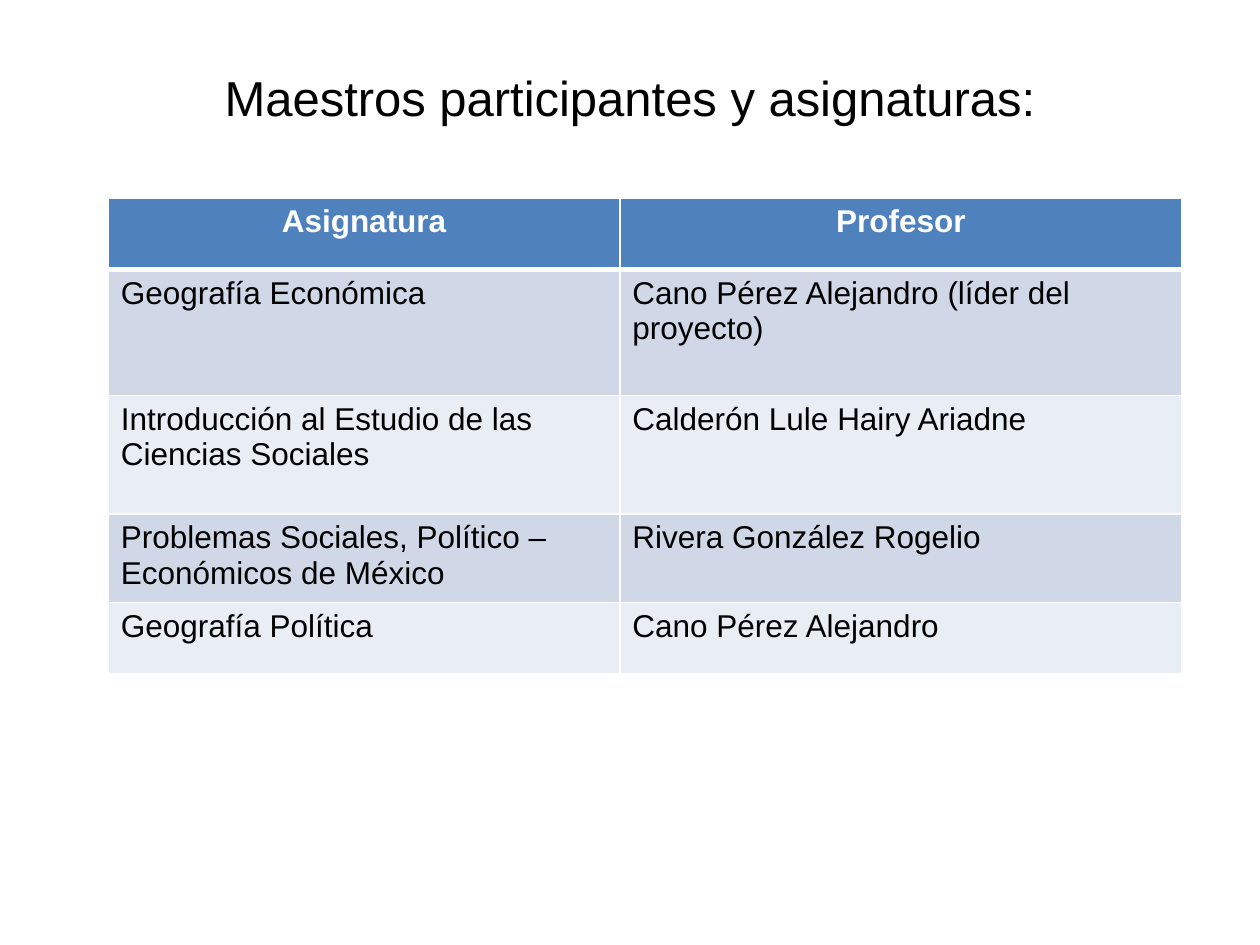
from lxml import etree
from pptx import Presentation
from pptx import util as u
from pptx.dml import color
from pptx.enum import text
from pptx.oxml import ns

FONT = "Arial"
BLACK, WHITE = "000000", "FFFFFF"
HEADER_FILL = "4F81BD"
BAND_FILLS = ["D0D8E8", "E9EDF4"]

HEADINGS = ("Asignatura", "Profesor")
COURSES = [
    ("Geografía Económica", "Cano Pérez Alejandro (líder del proyecto)"),
    ("Introducción al Estudio de las Ciencias Sociales", "Calderón Lule Hairy Ariadne"),
    ("Problemas Sociales, Político – Económicos de México", "Rivera González Rogelio"),
    ("Geografía Política", "Cano Pérez Alejandro"),
]
COLUMN_WIDTHS = [4.06, 4.46]
ROW_HEIGHTS = [0.57, 1, 0.94, 0.66, 0.57]


def rgb(hex_code):
    return color.RGBColor.from_string(hex_code)


def write(frame, words, size, hex_code, bold=False, align=text.PP_ALIGN.LEFT):
    paragraph = frame.paragraphs[0]
    paragraph.alignment = align
    run = paragraph.add_run()
    run.text = words
    run.font.name = FONT
    run.font.size = u.Pt(size)
    run.font.bold = bold
    run.font.color.rgb = rgb(hex_code)


def set_borders(cell, top, bottom):
    """Draw white cell edges; the widths are in points."""
    properties = cell._tc.get_or_add_tcPr()
    edges = {"a:lnL": 1, "a:lnR": 1, "a:lnT": top, "a:lnB": bottom}
    for position, (edge, width) in enumerate(edges.items()):
        line = etree.Element(ns.qn(edge), w=str(u.Pt(width)))
        fill = etree.SubElement(line, ns.qn("a:solidFill"))
        etree.SubElement(fill, ns.qn("a:srgbClr"), val=WHITE)
        properties.insert(position, line)


def add_title(slide, left, top, width, height):
    title = slide.shapes.add_textbox(*map(u.Inches, (left, top, width, height)))
    frame = title.text_frame
    frame.word_wrap = True
    frame.vertical_anchor = text.MSO_ANCHOR.MIDDLE
    write(frame, "Maestros participantes y asignaturas:", 28, BLACK,
          align=text.PP_ALIGN.CENTER)


def add_course_table(slide, left, top, widths, heights):
    box = map(u.Inches, (left, top, sum(widths), sum(heights)))
    table = slide.shapes.add_table(len(heights), len(widths), *box).table
    for column, width in zip(table.columns, widths):
        column.width = u.Inches(width)
    for row, height in zip(table.rows, heights):
        row.height = u.Inches(height)

    for r, entries in enumerate([HEADINGS] + COURSES):
        is_header = r == 0
        for c, entry in enumerate(entries):
            cell = table.cell(r, c)
            cell.fill.solid()
            cell.fill.fore_color.rgb = rgb(
                HEADER_FILL if is_header else BAND_FILLS[(r - 1) % 2])
            # The rule under the header is thicker
            set_borders(cell, 3 if r == 1 else 1, 3 if is_header else 1)
            write(cell.text_frame, entry, 18, WHITE if is_header else BLACK, is_header,
                  text.PP_ALIGN.CENTER if is_header else text.PP_ALIGN.LEFT)


def main():
    deck = Presentation()
    deck.slide_width, deck.slide_height = u.Inches(10), u.Inches(7.5)
    slide = deck.slides.add_slide(deck.slide_layouts[6])
    add_title(slide, 0.5, 0.3, 9, 0.94)
    add_course_table(slide, 0.86, 1.57, COLUMN_WIDTHS, ROW_HEIGHTS)
    deck.save("out.pptx")


if __name__ == "__main__":
    main()
